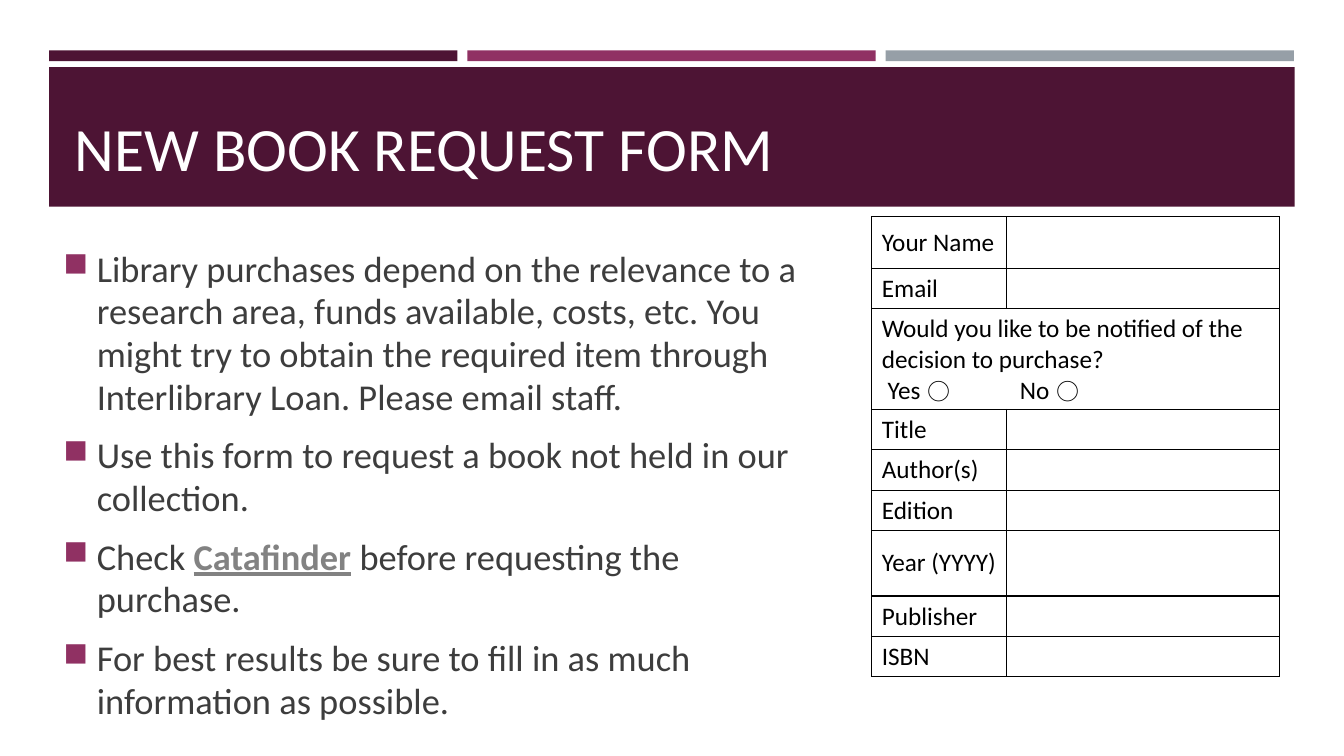
from dataclasses import dataclass

from lxml.etree import SubElement
from pptx import Presentation
from pptx.dml.color import RGBColor
from pptx.enum.shapes import MSO_SHAPE
from pptx.enum.text import MSO_ANCHOR
from pptx.oxml.ns import qn
from pptx.util import Cm, Pt


@dataclass(frozen=True)
class Theme:
    font: str = "Calibri"
    plum: str = "4D1434"
    magenta: str = "903163"
    grey: str = "969FA7"
    white: str = "FFFFFF"
    black: str = "000000"
    body: str = "3D3D3D"
    link: str = "828282"
    title_size: int = 44
    body_size: int = 26
    table_size: int = 18


theme = Theme()


def set_font(font, size, color):
    font.name = theme.font
    font.size = Pt(size)
    font.color.rgb = RGBColor.from_string(color)


def add_text_box(left, top, width, height, anchor):
    """Add a wrapping text box, lengths in centimetres, and return its frame."""
    box = page.shapes.add_textbox(Cm(left), Cm(top), Cm(width), Cm(height))
    box.text_frame.word_wrap = True
    box.text_frame.vertical_anchor = anchor
    return box.text_frame


deck = Presentation()
deck.slide_width, deck.slide_height = Cm(33.87), Cm(19.05)
page = deck.slides.add_slide(deck.slide_layouts[6])

# Header: three stripes above the title band
stripe_width, stripe_pitch, header_left = 10.29, 10.54, 1.24
bars = [
    (header_left + column * stripe_pitch, 1.27, stripe_width, 0.27, color)
    for column, color in enumerate([theme.plum, theme.magenta, theme.grey])
]
bars.append((header_left, 1.69, 31.39, 3.52, theme.plum))
for left, top, width, height, color in bars:
    bar = page.shapes.add_shape(
        MSO_SHAPE.RECTANGLE, Cm(left), Cm(top), Cm(width), Cm(height)
    )
    bar.shadow.inherit = False
    bar.fill.solid()
    bar.fill.fore_color.rgb = RGBColor.from_string(color)
    bar.line.fill.background()

title = add_text_box(1.63, 2.03, 30.63, 2.74, MSO_ANCHOR.BOTTOM).paragraphs[0]
title.text = "NEW BOOK REQUEST FORM"
set_font(title.font, theme.title_size, theme.white)

# Instructions: each bullet is a list of (text, is_link) spans
instructions = [
    [("Library purchases depend on the relevance to a research area, funds "
      "available, costs, etc. You might try to obtain the required item "
      "through Interlibrary Loan. Please email staff.", False)],
    [("Use this form to request a book not held in our collection.", False)],
    [("Check ", False), ("Catafinder", True),
     (" before requesting the purchase.", False)],
    [("For best results be sure to fill in as much information as possible.",
      False)],
]
frame = add_text_box(1.35, 5.74, 19.12, 12.98, MSO_ANCHOR.MIDDLE)
for index, spans in enumerate(instructions):
    para = frame.add_paragraph() if index else frame.paragraphs[0]
    para.line_spacing = 0.98
    para.space_before, para.space_after = Pt(theme.body_size * 0.2), Pt(6)
    properties = para._p.get_or_add_pPr()
    properties.set("marL", str(Cm(0.84)))
    properties.set("indent", str(-Cm(0.84)))
    bullet_color = SubElement(properties, qn("a:buClr"))
    SubElement(bullet_color, qn("a:srgbClr"), val=theme.magenta)
    SubElement(properties, qn("a:buSzPct"), val="92000")
    SubElement(properties, qn("a:buChar"), char="■")
    set_font(para.font, theme.body_size, theme.body)
    for text, is_link in spans:
        span = para.add_run()
        span.text = text
        if is_link:
            span.font.bold = span.font.underline = True
            span.font.color.rgb = RGBColor.from_string(theme.link)

# Request form: row label and height in centimetres
question = "Would you like to be notified of the decision to purchase?"
answers = " Yes ⃝\tNo ⃝"
form_rows = [
    ("Your Name", 1.3),
    ("Email", 0.94),
    (f"{question}\n{answers}", 2.36),
    ("Title", 0.94),
    ("Author(s)", 0.94),
    ("Edition", 0.94),
    ("Year (YYYY)", 1.65),
    ("Publisher", 0.94),
    ("ISBN", 0.94),
]
form_height = sum(height for label, height in form_rows)
form = page.shapes.add_table(
    len(form_rows), 2, Cm(21.97), Cm(5.46), Cm(10.28), Cm(form_height)
).table
form.first_row = form.horz_banding = False
form.columns[0].width, form.columns[1].width = Cm(3.4), Cm(6.88)

for row, (label, height) in enumerate(form_rows):
    form.rows[row].height = Cm(height)
    form.cell(row, 0).text = label
    for column in range(2):
        cell = form.cell(row, column)
        cell.vertical_anchor = MSO_ANCHOR.MIDDLE
        for side in ("lnL", "lnR", "lnT", "lnB"):
            border = SubElement(
                cell._tc.get_or_add_tcPr(), qn(f"a:{side}"), w=str(Pt(1))
            )
            fill = SubElement(border, qn("a:solidFill"))
            SubElement(fill, qn("a:srgbClr"), val=theme.black)
        cell.fill.background()
        for para in cell.text_frame.paragraphs:
            if "\t" in para.text:
                tabs = SubElement(para._p.get_or_add_pPr(), qn("a:tabLst"))
                SubElement(tabs, qn("a:tab"), pos=str(Cm(3.48)), algn="l")
            set_font(para.font, theme.table_size, theme.black)
    if label.startswith(question):
        form.cell(row, 0).merge(form.cell(row, 1))

deck.save("out.pptx")
